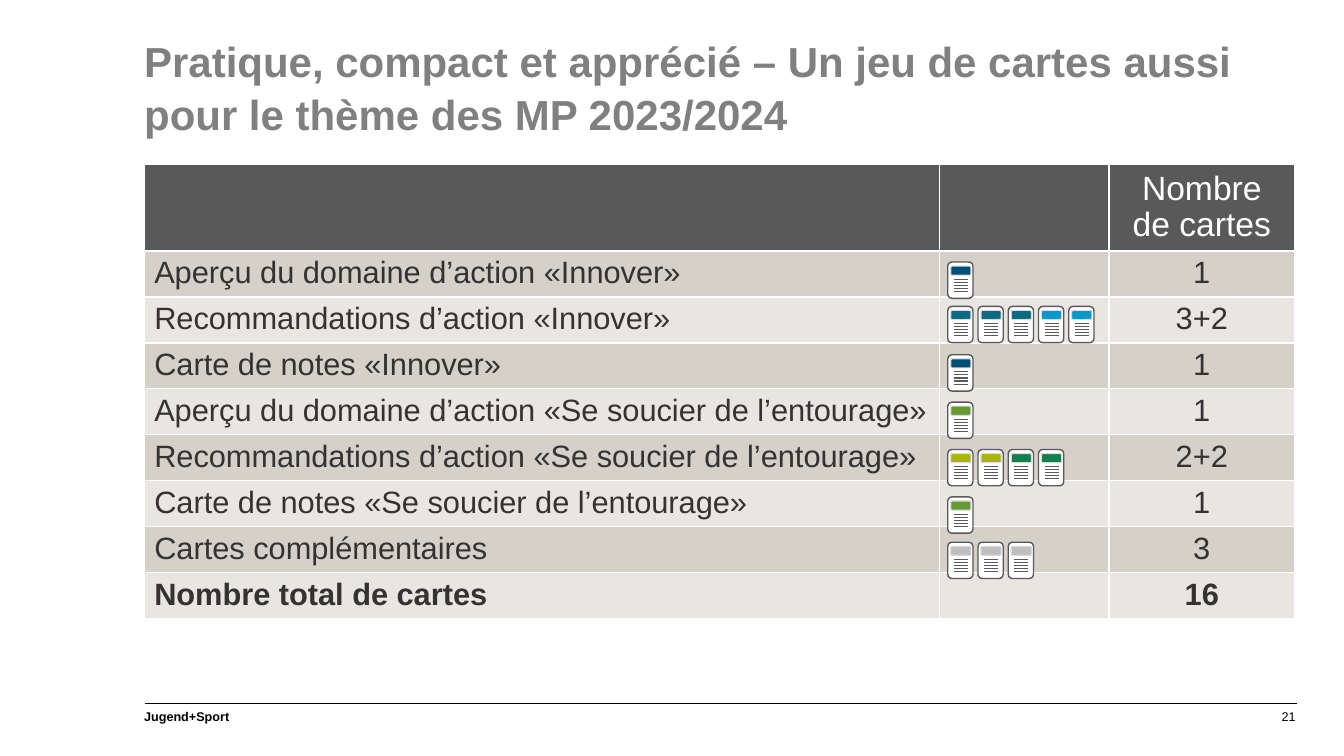
from dataclasses import dataclass

from lxml import etree
from pptx import Presentation
from pptx.dml.color import RGBColor
from pptx.enum.shapes import MSO_CONNECTOR, MSO_SHAPE
from pptx.enum.text import MSO_ANCHOR, MSO_AUTO_SIZE, PP_ALIGN
from pptx.oxml.ns import qn
from pptx.util import Inches, Pt

LEFT, CENTER, RIGHT = PP_ALIGN.LEFT, PP_ALIGN.CENTER, PP_ALIGN.RIGHT
MIDDLE, NO_FIT = MSO_ANCHOR.MIDDLE, MSO_AUTO_SIZE.NONE
ROUNDED, STRAIGHT = MSO_SHAPE.ROUNDED_RECTANGLE, MSO_CONNECTOR.STRAIGHT


@dataclass(frozen=True)
class Theme:
    """Colours and type sizes of the slide."""
    font: str = "Arial"
    title: str = "808080"
    black: str = "000000"
    white: str = "FFFFFF"
    dark: str = "595959"
    text: str = "333333"
    bands: tuple = ("D5D0C8", "E9E6E2")
    tab_line: str = "D9D9D9"
    navy: str = "014F77"
    teal: str = "0B6C81"
    sky: str = "0698CC"
    olive: str = "669933"
    lime: str = "A9B501"
    green: str = "10814A"
    grey: str = "BFBFBF"
    title_size: int = 30
    header_size: int = 24
    body_size: int = 22
    footer_size: int = 9


T = Theme()
CARD_LEFT, CARD_STEP = 9.4, 0.3
ROWS = [
    ("Aperçu du domaine d’action «Innover»", "1", 2.6, [T.navy]),
    ("Recommandations d’action «Innover»", "3+2", 3.04, [T.teal] * 3 + [T.sky] * 2),
    ("Carte de notes «Innover»", "1", 3.52, [T.navy]),
    ("Aperçu du domaine d’action «Se soucier de l’entourage»", "1", 3.99, [T.olive]),
    ("Recommandations d’action «Se soucier de l’entourage»", "2+2", 4.46,
     [T.lime] * 2 + [T.green] * 2),
    ("Carte de notes «Se soucier de l’entourage»", "1", 4.93, [T.olive]),
    ("Cartes complémentaires", "3", 5.38, [T.grey] * 3),
    ("Nombre total de cartes", "16", 0, []),
]


class SlideBuilder:
    """Draws themed elements on one slide."""

    def __init__(self, prs, theme):
        self.theme = theme
        self.s = prs.slides.add_slide(prs.slide_layouts[5])

    def style(self, tf, size, color, bold=False, align=LEFT, spacing=None):
        for p in tf.paragraphs:
            p.alignment = align
            p.line_spacing = spacing
            for r in p.runs:
                r.font.name = self.theme.font
                r.font.size = Pt(size)
                r.font.bold = bold
                r.font.color.rgb = RGBColor.from_string(color)

    def title(self, text, x, y, w, h):
        sp = self.s.shapes.title
        sp.left, sp.top, sp.width, sp.height = map(Inches, (x, y, w, h))
        tf = sp.text_frame
        tf.text = text
        tf.word_wrap = True
        tf.auto_size = NO_FIT
        tf.vertical_anchor = MIDDLE
        tf.margin_left = tf.margin_right = 0
        self.style(tf, self.theme.title_size, self.theme.title, True, spacing=1.05)

    def footer(self, text, x, y, w, h, bold=False, align=LEFT):
        tf = self.s.shapes.add_textbox(*map(Inches, (x, y, w, h))).text_frame
        tf.text = text
        tf.word_wrap = True
        tf.vertical_anchor = MIDDLE
        tf.margin_left = tf.margin_right = tf.margin_top = tf.margin_bottom = 0
        self.style(tf, self.theme.footer_size, self.theme.black, bold, align)

    def line(self, shapes, x1, y1, x2, y2, color):
        c = shapes.add_connector(STRAIGHT, *map(Inches, (x1, y1, x2, y2)))
        c.line.color.rgb = RGBColor.from_string(color)
        c.line.width = Pt(0.75)
        etree.SubElement(c._element.spPr, qn("a:effectLst"))

    def rounded(self, shapes, x, y, w, h, fill, outline, weight):
        sp = shapes.add_shape(ROUNDED, *map(Inches, (x, y, w, h)))
        sp.shadow.inherit = False
        sp.fill.solid()
        sp.fill.fore_color.rgb = RGBColor.from_string(fill)
        sp.line.color.rgb = RGBColor.from_string(outline)
        sp.line.width = Pt(weight)

    def cards(self, y, colors):
        shapes = self.s.shapes.add_group_shape().shapes
        for i, color in enumerate(colors):
            x = CARD_LEFT + i * CARD_STEP
            self.rounded(shapes, x, y, 0.25, 0.36, self.theme.white, self.theme.dark, 1)
            self.rounded(shapes, x + 0.03, y + 0.04, 0.2, 0.09, color,
                         self.theme.tab_line, 0.75)
            for k in range(5):
                ly = y + 0.17 + k * 0.03
                self.line(shapes, x + 0.06, ly, x + 0.2, ly, self.theme.dark)

    def cell(self, cell, text, fill, size, color, bold=False, align=LEFT):
        pr = cell._tc.get_or_add_tcPr()
        for side in ("a:lnL", "a:lnR", "a:lnT", "a:lnB"):
            ln = etree.SubElement(pr, qn(side), w=str(Pt(1)))
            solid = etree.SubElement(ln, qn("a:solidFill"))
            etree.SubElement(solid, qn("a:srgbClr"), val=self.theme.white)
        cell.fill.solid()
        cell.fill.fore_color.rgb = RGBColor.from_string(fill)
        cell.vertical_anchor = MIDDLE
        if text:
            cell.text_frame.text = text
            self.style(cell.text_frame, size, color, bold, align, 0.95)

    def table(self, header, rows, x, y, widths, header_h, body_h):
        t = self.theme
        table = self.s.shapes.add_table(
            len(rows) + 1, len(widths), Inches(x), Inches(y),
            Inches(sum(widths)), Inches(header_h + body_h)).table
        for col, w in zip(table.columns, widths):
            col.width = Inches(w)
        for row in table.rows:
            row.height = Inches(body_h / len(rows))
        table.rows[0].height = Inches(header_h)
        for c, text in enumerate(header):
            self.cell(table.cell(0, c), text, t.dark, t.header_size, t.white, align=CENTER)
        for i, (label, count, *_) in enumerate(rows):
            last = i == len(rows) - 1
            for c, text in enumerate((label, "", count)):
                self.cell(table.cell(i + 1, c), text, t.bands[i % 2], t.body_size,
                          t.text, last, CENTER if c == 2 else LEFT)


def main():
    prs = Presentation()
    prs.slide_width, prs.slide_height = Inches(13.33), Inches(7.5)
    b = SlideBuilder(prs, T)
    b.footer("21", 9.62, 7.03, 3.23, 0.16, align=RIGHT)
    b.line(b.s.shapes, 12.86, 6.98, 1.44, 6.98, T.black)
    b.footer("Jugend+Sport", 1.43, 6.98, 5.5, 0.25, bold=True)
    b.title("Pratique, compact et apprécié – Un jeu de cartes aussi\v"
            "pour le thème des MP 2023/2024", 1.43, 0.28, 11.42, 1.14)
    b.table(("", "", "Nombre de cartes"), ROWS, 1.43, 1.63, (7.89, 1.68, 1.84), 0.84, 3.65)
    for _, _, y, colors in ROWS:
        if colors:
            b.cards(y, colors)
    prs.save("out.pptx")


if __name__ == "__main__":
    main()
